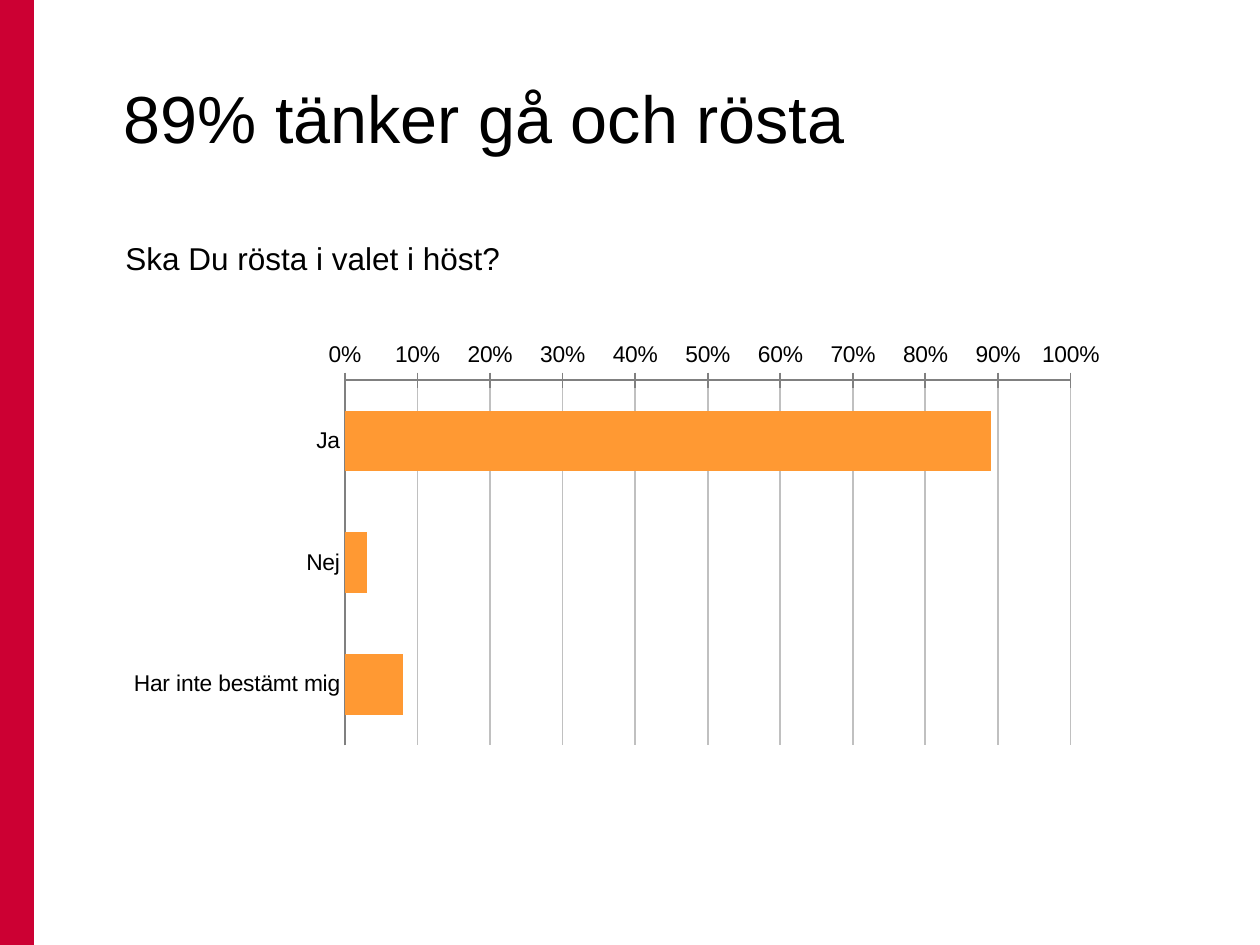
from lxml.etree import SubElement
from pptx import Presentation
from pptx.chart.data import CategoryChartData
from pptx.dml.color import RGBColor
from pptx.enum.chart import XL_CHART_TYPE, XL_TICK_MARK
from pptx.enum.shapes import MSO_SHAPE
from pptx.enum.text import MSO_ANCHOR, MSO_AUTO_SIZE, PP_ALIGN
from pptx.oxml.ns import qn
from pptx.util import Emu, Pt

EMU_PER_PX = 914400 / 126


def px(*lengths):
    return [Emu(round(length * EMU_PER_PX)) for length in lengths]


def colour(value):
    return RGBColor.from_string(value)


def format_font(font, size, name="Arial", fill="000000"):
    font.name = name
    font.size = Pt(size)
    font.bold = False
    font.color.rgb = colour(fill)


def write_text(frame, text, size, anchor=MSO_ANCHOR.TOP, wrap=True, resize=MSO_AUTO_SIZE.NONE):
    frame.word_wrap = wrap
    frame.auto_size = resize
    frame.vertical_anchor = anchor
    para = frame.paragraphs[0]
    para.alignment = PP_ALIGN.LEFT
    span = para.add_run()
    span.text = text
    format_font(span.font, size)


class SlideBuilder:
    bar = "FF9933"
    accent = "CC0033"
    axis = "808080"
    grid = "C0C0C0"

    def __init__(self, deck):
        self.page = deck.slides.add_slide(deck.slide_layouts[5])

    def band(self, *place):
        shape = self.page.shapes.add_shape(MSO_SHAPE.RECTANGLE, *px(*place))
        shape.shadow.inherit = False
        shape.fill.solid()
        shape.fill.fore_color.rgb = colour(self.accent)
        shape.line.fill.background()

    def title(self, text, *place):
        box = self.page.shapes.title
        box.left, box.top, box.width, box.height = px(*place)
        write_text(box.text_frame, text, 38, anchor=MSO_ANCHOR.MIDDLE)

    def label(self, text, *place):
        box = self.page.shapes.add_textbox(*px(*place))
        write_text(box.text_frame, text, 18, wrap=False, resize=MSO_AUTO_SIZE.SHAPE_TO_FIT_TEXT)

    def bar_chart(self, answers, *place):
        data = CategoryChartData(number_format="0%")
        data.categories = list(answers)
        data.add_series("Series 1", list(answers.values()))
        chart = self.page.shapes.add_chart(XL_CHART_TYPE.BAR_CLUSTERED, *px(*place), data).chart
        format_font(chart.font, 18)
        chart.has_legend = False
        chart.has_title = False

        plot = chart.plots[0]
        plot.gap_width = 100
        plot.vary_by_categories = False
        series = plot.series[0]
        series.format.fill.solid()
        series.format.fill.fore_color.rgb = colour(self.bar)
        series.format.line.fill.background()

        for axis in (chart.category_axis, chart.value_axis):
            format_font(axis.tick_labels.font, 13)
            axis.format.line.color.rgb = colour(self.axis)
            axis.format.line.width = Pt(1)
            axis.minor_tick_mark = XL_TICK_MARK.NONE
        chart.category_axis.major_tick_mark = XL_TICK_MARK.NONE
        chart.category_axis.reverse_order = True

        values = chart.value_axis
        values.major_tick_mark = XL_TICK_MARK.CROSS
        values.minimum_scale, values.maximum_scale, values.major_unit = 0, 1, 0.1
        values.tick_labels.number_format = "0%"
        values.tick_labels.number_format_is_linked = False
        values.has_major_gridlines = True
        values.major_gridlines.format.line.color.rgb = colour(self.grid)
        values.major_gridlines.format.line.width = Pt(1)
        self.place_plot(chart, x=0.23, y=0.11, w=0.72, h=0.87)

    def place_plot(self, chart, **fractions):
        area = chart.element.find(".//" + qn("c:plotArea"))
        layout = area.find(qn("c:layout"))
        if layout is None:
            layout = SubElement(area, qn("c:layout"))
            area.insert(0, layout)
        manual = SubElement(layout, qn("c:manualLayout"))
        settings = {"layoutTarget": "inner", "xMode": "edge", "yMode": "edge", **fractions}
        for tag, value in settings.items():
            SubElement(manual, qn("c:" + tag)).set("val", str(value))


def main():
    deck = Presentation()
    deck.slide_width, deck.slide_height = px(1260, 945)
    slide = SlideBuilder(deck)
    slide.band(0, 0, 34, 945)
    slide.title("89% tänker gå och rösta", 111, 38, 1057, 158)
    slide.label("Ska Du rösta i valet i höst?", 113, 233, 412, 50)
    answers = {"Ja": 0.89, "Nej": 0.03, "Har inte bestämt mig": 0.08}
    slide.bar_chart(answers, 113, 334, 1008, 420)
    deck.save("out.pptx")


if __name__ == "__main__":
    main()
